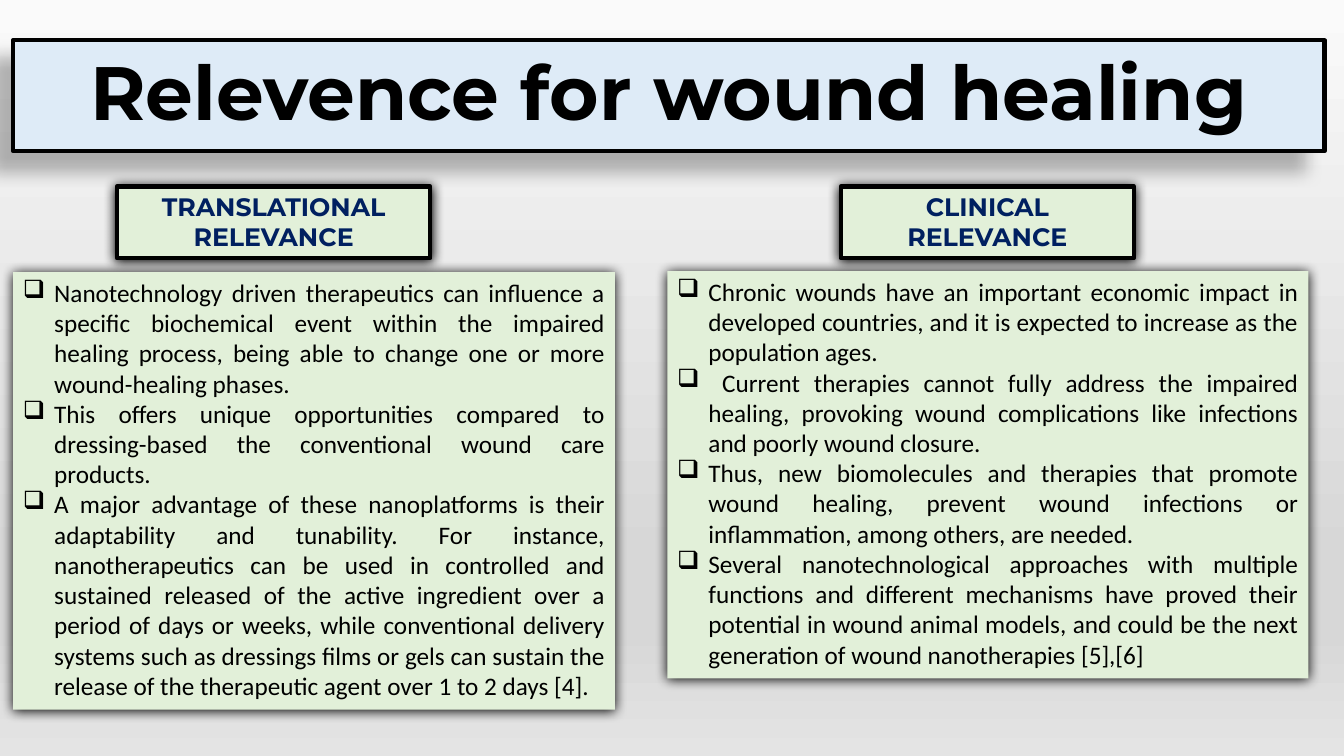
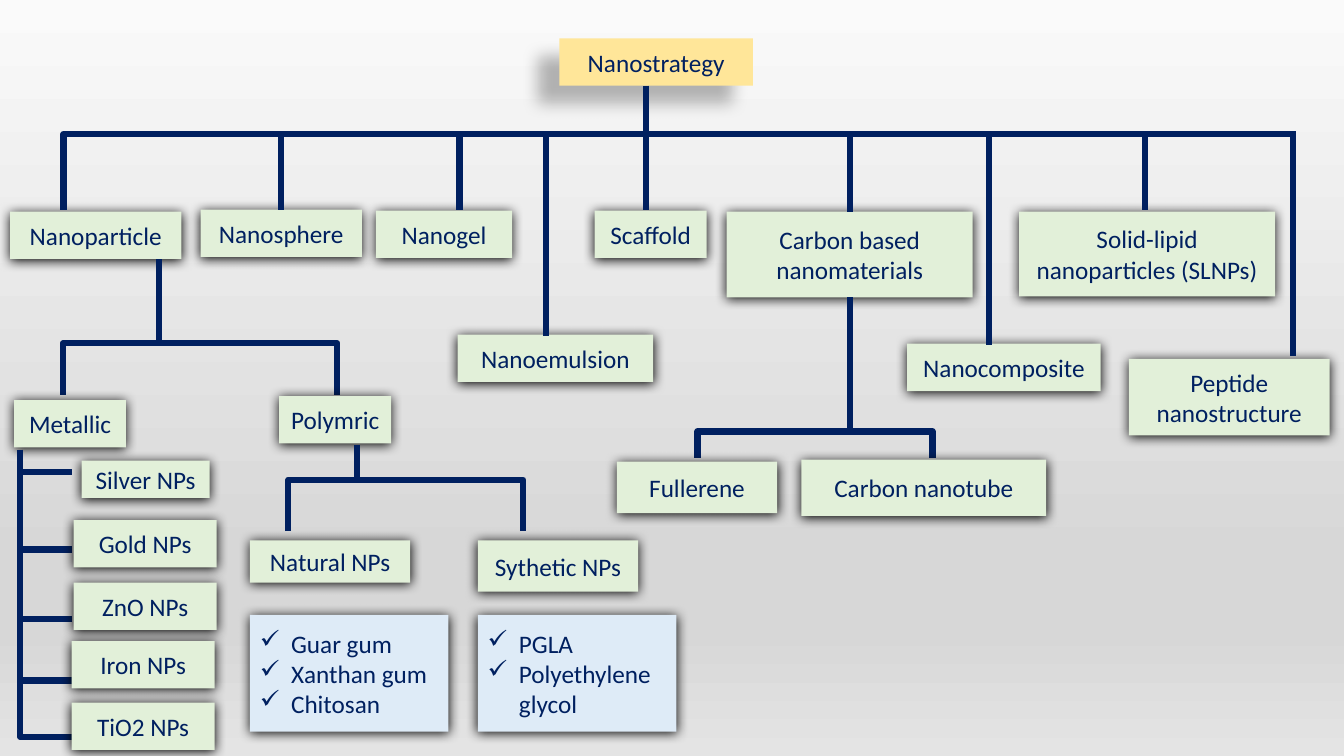
import dataclasses

import pptx
import pptx.dml.color
import pptx.enum.shapes
import pptx.enum.text
import pptx.oxml.ns
import pptx.util
from lxml import etree

RGBColor = pptx.dml.color.RGBColor
SHAPE = pptx.enum.shapes.MSO_SHAPE
ALIGN = pptx.enum.text.PP_ALIGN
ANCHOR = pptx.enum.text.MSO_ANCHOR
Pt = pptx.util.Pt
qn = pptx.oxml.ns.qn

BLACK = RGBColor(0x00, 0x00, 0x00)
NAVY = RGBColor(0x00, 0x20, 0x60)
GREEN = RGBColor(0xE2, 0xF0, 0xD9)
BLUE = RGBColor(0xDE, 0xEB, 0xF7)
YELLOW = RGBColor(0xFF, 0xE6, 0x99)
BACKGROUND_STOPS = (
    (0, RGBColor(0xFA, 0xFA, 0xFA)),
    (74, RGBColor(0xD7, 0xD7, 0xD7)),
    (83, RGBColor(0xD7, 0xD7, 0xD7)),
    (100, RGBColor(0xE4, 0xE4, 0xE4)),
)

TITLE_FONT = "Montserrat"
BODY_FONT = "Calibri"
BODY_SIZE = 18
BRANCH_WEIGHT = 4.5
FRAME_WEIGHT = 3
INDENT = pptx.util.Inches(0.31)

# Shadows: opacity in percent, blur and distance in points, angle in degrees.
NEAR_SHADOW = (100, 8.5, 1, 90)
FAR_SHADOW = (28, 11.8, 19.7, 141)

# All positions are columns and rows of a square grid, ten cells to the inch.
CELL = pptx.util.Inches(0.1)
COLUMNS, ROWS = 133.33, 75
NODE_HEIGHT = 4.7


def cells(count):
    return round(count * CELL)


@dataclasses.dataclass
class Box:
    left: float
    top: float
    width: float
    height: float

    def within(self, left, top, width, height):
        """Return a box placed from this box's top left corner."""
        return Box(self.left + left, self.top + top, width, height)

    def lengths(self):
        return [cells(n) for n in (self.left, self.top, self.width, self.height)]


def add_slide(deck):
    slide = deck.slides.add_slide(deck.slide_layouts[6])
    fill = slide.background.fill
    fill.gradient()
    fill.gradient_angle = 270
    stops = slide.element.find(".//" + qn("a:gsLst"))
    for stop in list(stops):
        stops.remove(stop)
    for percent, color in BACKGROUND_STOPS:
        stop = etree.SubElement(stops, qn("a:gs"), pos=str(percent * 1000))
        etree.SubElement(stop, qn("a:srgbClr"), val=str(color))
    return slide


def cast_shadow(shape, shadow):
    opacity, blur, distance, angle = shadow
    shape.shadow.inherit = False
    effects = shape.element.spPr.find(qn("a:effectLst"))
    outer = etree.SubElement(
        effects, qn("a:outerShdw"), blurRad=str(Pt(blur)), dist=str(Pt(distance)),
        dir=str(angle * 60000), algn="ctr", rotWithShape="0")
    color = etree.SubElement(outer, qn("a:srgbClr"), val=str(BLACK))
    etree.SubElement(color, qn("a:alpha"), val=str(opacity * 1000))


def set_bullet(paragraph, bullet):
    properties = paragraph._p.get_or_add_pPr()
    properties.set("marL", str(INDENT))
    properties.set("indent", str(-INDENT))
    bullet_mark = etree.Element(qn("a:buChar"), char=bullet)
    defaults = properties.find(qn("a:defRPr"))
    if defaults is None:
        properties.append(bullet_mark)
    else:
        defaults.addprevious(bullet_mark)


def add_panel(slide, box, paragraphs, fill=GREEN, color=NAVY, font=BODY_FONT,
              size=BODY_SIZE, bold=False, align=ALIGN.CENTER, anchor=ANCHOR.MIDDLE,
              shadow=NEAR_SHADOW, framed=False, bullet=None, spacing=None):
    """Add a filled, shadowed rectangle with text."""
    panel = slide.shapes.add_shape(SHAPE.RECTANGLE, *box.lengths())
    panel.fill.solid()
    panel.fill.fore_color.rgb = fill
    if framed:
        panel.line.color.rgb = BLACK
        panel.line.width = Pt(FRAME_WEIGHT)
    else:
        panel.line.fill.background()
    cast_shadow(panel, shadow)

    frame = panel.text_frame
    frame.word_wrap = True
    frame.vertical_anchor = anchor
    for index, text in enumerate(paragraphs):
        paragraph = frame.add_paragraph() if index else frame.paragraphs[0]
        paragraph.text = text
        paragraph.alignment = align
        paragraph.line_spacing = spacing
        paragraph.font.name = font
        paragraph.font.size = Pt(size)
        paragraph.font.bold = bold
        paragraph.font.color.rgb = color
        if bullet:
            set_bullet(paragraph, bullet)
    return panel


def add_nodes(slide, area, nodes):
    """Add labelled boxes inside the area and return them by label."""
    return {label: add_panel(slide, area.within(*place), [label])
            for label, *place in nodes}


def style_branch(line):
    line.color.rgb = NAVY
    line.width = Pt(BRANCH_WEIGHT)


def add_branch(slide, area, start, end):
    points = [cells(n) for x, y in (start, end) for n in (area.left + x, area.top + y)]
    branch = slide.shapes.add_connector(
        pptx.enum.shapes.MSO_CONNECTOR.STRAIGHT, *points)
    style_branch(branch.line)
    etree.SubElement(branch._element.spPr, qn("a:effectLst"))
    return branch


def add_bracket(slide, box, opens_down=False):
    """Add a square bracket that fills the box and opens right or down."""
    frame = box
    if opens_down:
        shift = (box.width - box.height) / 2
        frame = box.within(shift, -shift, box.height, box.width)
    bracket = slide.shapes.add_shape(SHAPE.LEFT_BRACKET, *frame.lengths())
    bracket.rotation = 90 if opens_down else 0
    bracket.adjustments[0] = 0
    bracket.fill.background()
    style_branch(bracket.line)
    bracket.shadow.inherit = False


def add_fork(slide, area, place, stem):
    """Add a stem from its top down to a two-legged bracket."""
    stem_column, stem_top = stem
    add_bracket(slide, area.within(*place), opens_down=True)
    return add_branch(slide, area, (stem_column, stem_top), (stem_column, place[1]))


def add_title(slide, box, title):
    add_panel(slide, box, [title], fill=BLUE, color=BLACK, font=TITLE_FONT, size=54,
              bold=True, shadow=FAR_SHADOW, framed=True, spacing=0.9)


def add_relevance(slide, area, heading, heading_place, points, points_top):
    """Add a framed heading with a bulleted panel that fills the area below it."""
    add_panel(slide, area.within(*heading_place), [heading], font=TITLE_FONT,
              bold=True, anchor=ANCHOR.TOP, framed=True)
    add_panel(slide, area.within(0, points_top, area.width, area.height - points_top),
              points, color=BLACK, align=ALIGN.JUSTIFY, anchor=ANCHOR.TOP, bullet="❑")


def add_families(slide, area):
    """Add the root and its families; return the family boxes by label."""
    add_panel(slide, area.within(54.5, 0, 19.2, NODE_HEIGHT), ["Nanostrategy"],
              fill=YELLOW, shadow=FAR_SHADOW)
    families = add_nodes(slide, area, [
        ("Nanoparticle", 0, 17.2, 17, NODE_HEIGHT),
        ("Nanosphere", 18.9, 17, 16, NODE_HEIGHT),
        ("Nanogel", 36.3, 17.1, 13.5, NODE_HEIGHT),
        ("Nanoemulsion", 44.4, 29.4, 19.4, NODE_HEIGHT),
        ("Scaffold", 58, 17.1, 11.1, NODE_HEIGHT),
        ("Carbon based nanomaterials", 71.1, 17.2, 24.4, 8.5),
        ("Nanocomposite", 89, 30.3, 19.2, NODE_HEIGHT),
        ("Solid-lipid nanoparticles (SLNPs)", 100.1, 17.2, 25.4, 8.4),
        ("Peptide nanostructure", 111, 31.8, 19.9, 7.6),
    ])
    bar = 9.5
    add_fork(slide, area, (5.3, bar, 107.3, 7.5), stem=(63.1, NODE_HEIGHT))
    add_branch(slide, area, (112.6, bar), (127.6, bar))
    for column, bottom in ((44.6, 17), (53.2, 29.5), (63.1, 17), (97.1, 30.4),
                           (127.3, 31.5)):
        add_branch(slide, area, (column, bar), (column, bottom))
    for column, label in ((26.9, "Nanosphere"), (83.3, "Carbon based nanomaterials")):
        drop = add_branch(slide, area, (column, bar), (column, 17))
        drop.end_connect(families[label], 0)
    return families


def add_particle_kinds(slide, area):
    add_fork(slide, area, (5.25, 8.35, 27.2, 5.1), stem=(14.8, 0))
    add_nodes(slide, area, [
        ("Metallic", 0.4, 14, 11.1, NODE_HEIGHT),
        ("Polymric", 26.7, 13.6, 11.1, NODE_HEIGHT),
    ])


def add_metals(slide, area):
    rung = 5.1
    add_bracket(slide, area.within(0, 2.2, rung, 26.3))
    add_branch(slide, area, (0, 0), (0, 2.5))
    for row in (9.9, 16.8, 22.9):
        add_branch(slide, area, (0, row), (rung, row))
    add_nodes(slide, area, [
        ("Silver NPs", 6.1, 1.1, 12.7, 3.7),
        ("Gold NPs", 5.3, 7, 14.2, NODE_HEIGHT),
        ("ZnO NPs", 5.3, 13.2, 14.2, NODE_HEIGHT),
        ("Iron NPs", rung, 19, 14.2, NODE_HEIGHT),
        ("TiO2 NPs", rung, 25.1, 14.2, NODE_HEIGHT),
    ])


def add_polymers(slide, area):
    add_fork(slide, area, (3.8, 3.5, 23.3, 5.1), stem=(10.6, 0))
    for left, label, height, examples in (
            (0, "Natural NPs", 4.2, ["Guar gum", "Xanthan gum", "Chitosan"]),
            (22.6, "Sythetic NPs", 5.1, ["PGLA", "Polyethylene glycol"])):
        add_nodes(slide, area, [(label, left, 9.5, 15.9, height)])
        add_panel(slide, area.within(left, 16.9, 19.7, 11.6), examples, fill=BLUE,
                  align=ALIGN.LEFT, bullet="✓")


def add_carbons(slide, area, parent):
    stem = add_fork(slide, area, (8, 13.6, 23.3, 2.6), stem=(23.1, 0))
    stem.begin_connect(parent, 2)
    add_nodes(slide, area, [
        ("Fullerene", 0, 16.6, 15.9, 5.1),
        ("Carbon nanotube", 18.3, 16.4, 24.3, 5.6),
    ])


def build_relevance_slide(deck):
    slide = add_slide(deck)
    add_title(slide, Box(1.3, 4, 130.1, 11), "Relevence for wound healing")
    add_relevance(
        slide, Box(1.3, 18.5, 59.7, 51.9), "TRANSLATIONAL RELEVANCE",
        (10.3, 0, 31.1, 7.1), [
            "Nanotechnology driven therapeutics can influence a specific biochemical event "
            "within the impaired healing process, being able to change one or more "
            "wound-healing phases.",
            "This offers unique opportunities compared to dressing-based the conventional "
            "wound care products.",
            "A major advantage of these nanoplatforms is their adaptability and tunability. "
            "For instance, nanotherapeutics can be used in controlled and sustained released "
            "of the active ingredient over a period of days or weeks, while conventional "
            "delivery systems such as dressings films or gels can sustain the release of the "
            "therapeutic agent over 1 to 2 days [4].",
        ], points_top=8.5)
    add_relevance(
        slide, Box(66.2, 18.5, 63.6, 48.8), "CLINICAL RELEVANCE",
        (17.2, 0, 29.1, 7.1), [
            "Chronic wounds have an important economic impact in developed countries, and "
            "it is expected to increase as the population ages.",
            " Current therapies cannot fully address the impaired healing, provoking wound "
            "complications like infections and poorly wound closure.",
            "Thus, new biomolecules and therapies that promote wound healing, prevent wound "
            "infections or inflammation, among others, are needed.",
            "Several nanotechnological approaches with multiple functions and different "
            "mechanisms have proved their potential in wound animal models, and could be the "
            "next generation of wound nanotherapies [5],[6]",
        ], points_top=8.4)


def build_strategy_slide(deck):
    slide = add_slide(deck)
    families = add_families(slide, Box(1, 3.8, 130.9, 39.4))
    add_particle_kinds(slide, Box(1, 25.7, 37.8, 18.7))
    add_metals(slide, Box(2, 44.6, 19.5, 29.8))
    add_polymers(slide, Box(24.8, 44.1, 42.3, 28.5))
    add_carbons(slide, Box(61.2, 29.2, 42.6, 22),
                families["Carbon based nanomaterials"])


def main():
    deck = pptx.Presentation()
    deck.slide_width = cells(COLUMNS)
    deck.slide_height = cells(ROWS)
    build_relevance_slide(deck)
    build_strategy_slide(deck)
    deck.save("out.pptx")


if __name__ == "__main__":
    main()
